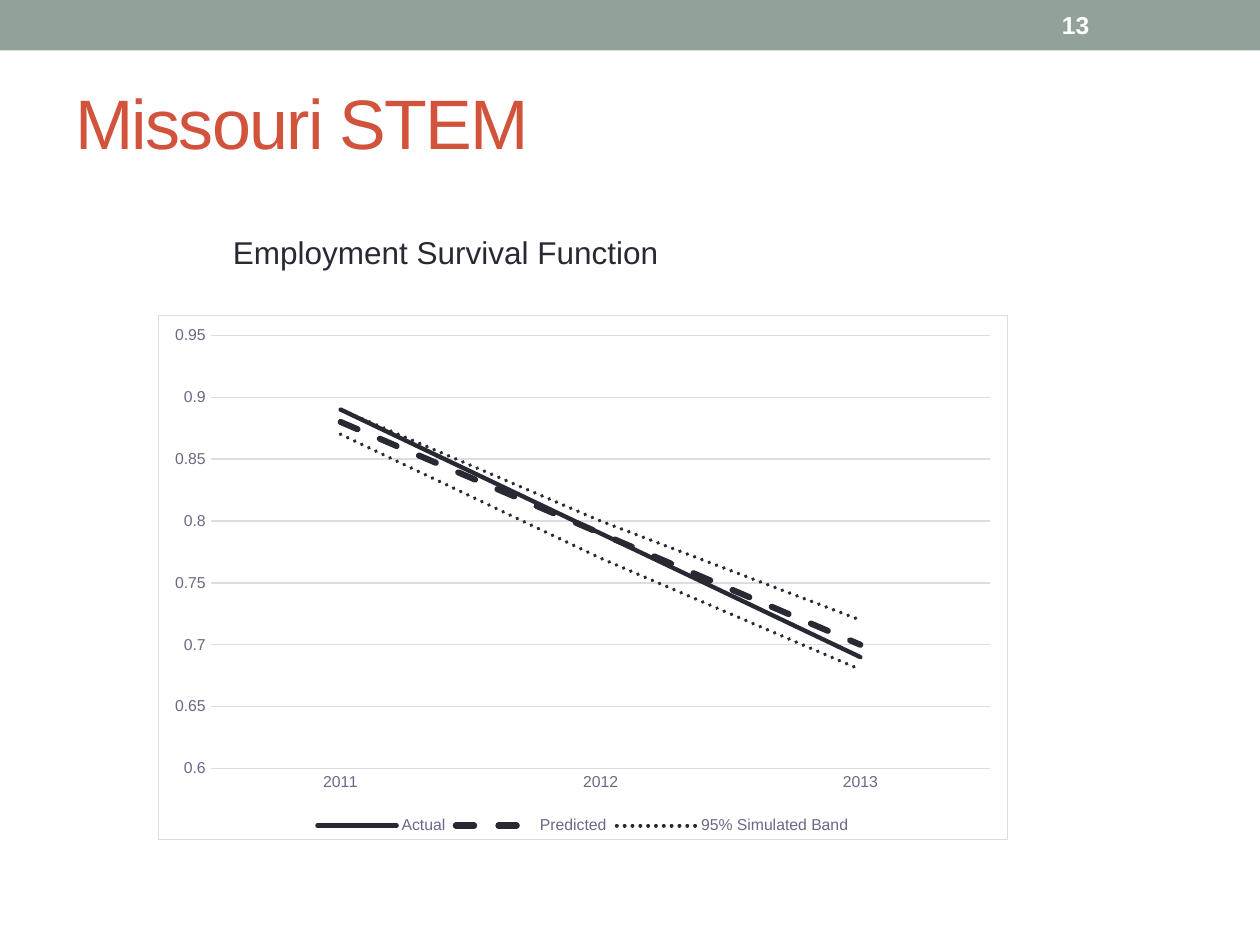
from lxml.etree import fromstring
from pptx import Presentation
from pptx.chart.data import CategoryChartData
from pptx.dml.color import RGBColor
from pptx.enum.chart import XL_CHART_TYPE as ChartType, XL_LEGEND_POSITION as LegendSpot, XL_TICK_MARK as Tick
from pptx.enum.dml import MSO_LINE_DASH_STYLE as Dash
from pptx.enum.shapes import MSO_SHAPE as Preset
from pptx.enum.text import MSO_ANCHOR as Anchor
from pptx.oxml.ns import nsdecls, qn
from pptx.util import Inches, Pt

COLORS = {"band": "93A299", "title": "D2533C", "ink": "292934",
          "axis": "696986", "grid": "DCDCE3", "white": "FFFFFF"}
FONT = "Arial"


def style_font(font, size, color, bold=False):
    """Set the typeface, size, colour and weight of a font."""
    font.name, font.size, font.bold = FONT, Pt(size), bold
    font.color.rgb = RGBColor.from_string(COLORS[color])


def add_text(page, text, place, size, color, bold=False):
    """Add a one-paragraph text box and return it."""
    box = page.shapes.add_textbox(*map(Inches, place))
    box.text_frame.word_wrap = True
    para = box.text_frame.paragraphs[0]
    para.text = text
    style_font(para.font, size, color, bold)
    return box


deck = Presentation()
deck.slide_width, deck.slide_height = Inches(10), Inches(7.5)
page = deck.slides.add_slide(deck.slide_layouts[6])

# Header band and headings
band = page.shapes.add_shape(Preset.RECTANGLE, 0, 0, deck.slide_width, Inches(0.4))
band.shadow.inherit = False
band.fill.solid()
band.fill.fore_color.rgb = RGBColor.from_string(COLORS["band"])
band.line.fill.background()

number = add_text(page, "13", (8.33, 0.02, 1.17, 0.36), 14, "white", bold=True)
number.text_frame.vertical_anchor = Anchor.MIDDLE

title = add_text(page, "Missouri STEM", (0.5, 0.58, 9, 1.08), 40, "title")
title_span = title.text_frame.paragraphs[0].runs[0]
title_span._r.get_or_add_rPr().set("spc", "-100")

heading = add_text(page, "Employment Survival Function", (1.75, 1.8, 3.61, 0.4), 18, "ink")
heading.text_frame.word_wrap = False

# Survival chart
series_styles = [
    ("Actual", (0.89, 0.79, 0.69), 2.5, Dash.SOLID),
    ("Predicted", (0.88, 0.79, 0.7), 3.5, Dash.DASH),
    ("95% Simulated Band", (0.87, 0.77, 0.68), 2.25, Dash.ROUND_DOT),
    ("Series 4", (0.89, 0.8, 0.72), 2.25, Dash.ROUND_DOT),
]
data = CategoryChartData()
data.categories = ["2011", "2012", "2013"]
for name, values, width, dash in series_styles:
    data.add_series(name, values)

frame = page.shapes.add_chart(
    ChartType.LINE, Inches(1.25), Inches(2.5), Inches(6.75), Inches(4.17), data)
chart = frame.chart
chart.has_title = False
style_font(chart.font, 10, "ink")

for series, (name, values, width, dash) in zip(chart.plots[0].series, series_styles):
    series.smooth = False
    line = series.format.line
    line.color.rgb = RGBColor.from_string(COLORS["ink"])
    line.width, line.dash_style = Pt(width), dash
    line._get_or_add_ln().set("cap", "rnd")

years, shares = chart.category_axis, chart.value_axis
for axis in (years, shares):
    axis.major_tick_mark = axis.minor_tick_mark = Tick.NONE
    style_font(axis.tick_labels.font, 9, "axis")
shares.minimum_scale, shares.maximum_scale, shares.major_unit = 0.6, 0.95, 0.05
shares.has_major_gridlines = True
shares.format.line.fill.background()
for line in (years.format.line, shares.major_gridlines.format.line):
    line.color.rgb = RGBColor.from_string(COLORS["grid"])
    line.width = Pt(0.75)

# Legend names the simulated band once
chart.has_legend = True
legend = chart.legend
legend.position, legend.include_in_layout = LegendSpot.BOTTOM, False
style_font(legend.font, 9, "axis")
legend._element.find(qn("c:legendPos")).addnext(fromstring(
    f'<c:legendEntry {nsdecls("c")}><c:idx val="3"/><c:delete val="1"/></c:legendEntry>'))

# Chart background and border
chart.element.find(qn("c:chart")).addnext(fromstring(
    f'<c:spPr {nsdecls("c", "a")}><a:solidFill><a:srgbClr val="{COLORS["white"]}"/></a:solidFill>'
    f'<a:ln w="{Pt(0.75)}"><a:solidFill><a:srgbClr val="{COLORS["grid"]}"/></a:solidFill></a:ln></c:spPr>'))

deck.save("out.pptx")
